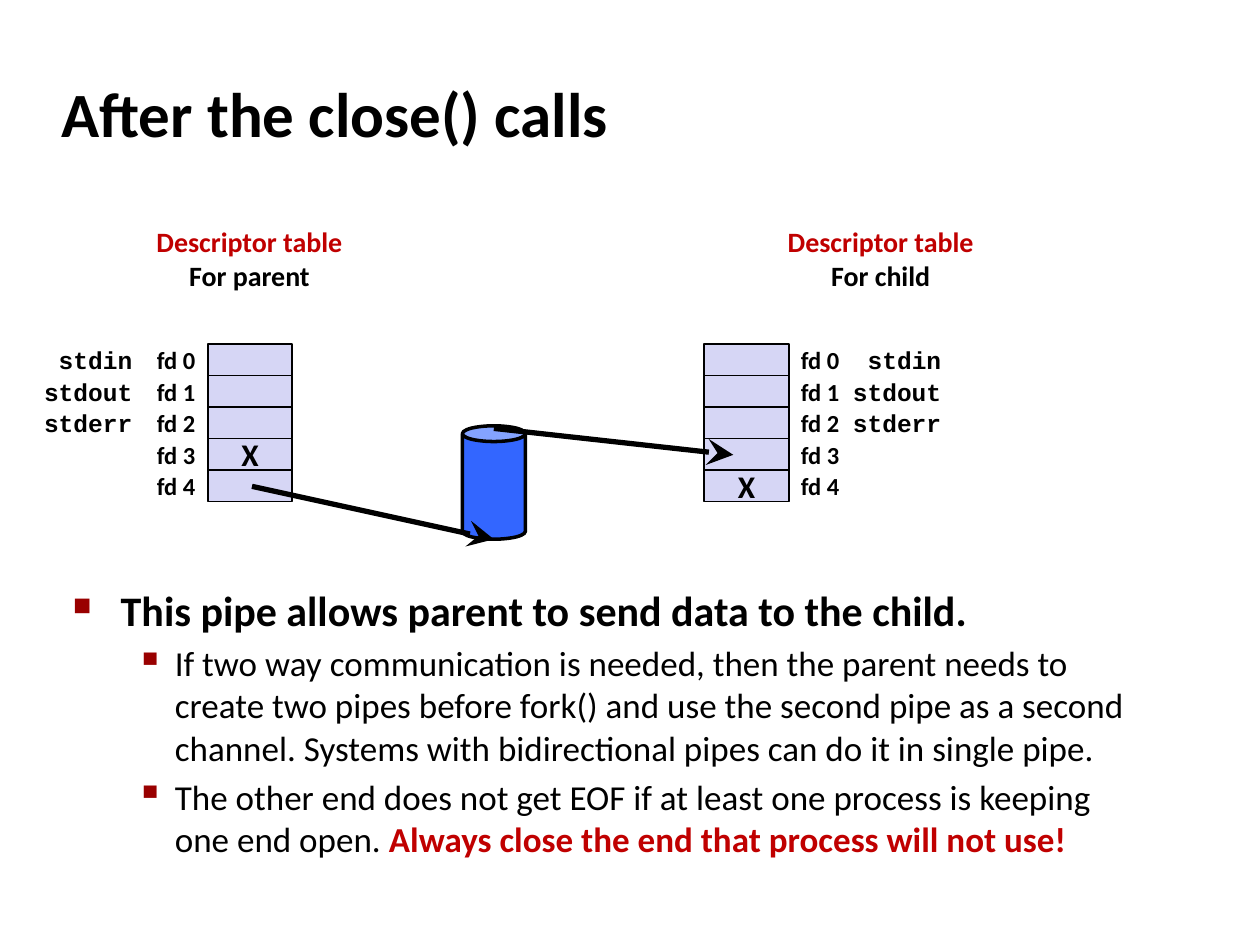
import pptx
import pptx.dml.color
import pptx.enum.shapes
import pptx.enum.text
import pptx.oxml.ns
import pptx.util
from lxml import etree

PX = 9144  # 100 px to the inch
BLACK, RED, BULLET = "000000", "C00000", "990000"
CELL, PIPE = "D6D6F5", "3366FF"
ALIGN = pptx.enum.text.PP_ALIGN
ANCHOR = pptx.enum.text.MSO_ANCHOR
SHAPE = pptx.enum.shapes.MSO_SHAPE

ROW_TOP, ROW_H, CELL_W = 273, 25, 67
STREAMS = ["stdin", "stdout", "stderr"]


def px(n):
    return pptx.util.Emu(n * PX)


def color(value):
    return pptx.dml.color.RGBColor.from_string(value)


def sub(parent, tag, **attrs):
    return etree.SubElement(parent, pptx.oxml.ns.qn(tag), attrs)


def write(p, text, size=14, font="Calibri", fill=BLACK, bold=True, align=None):
    r = p.add_run()
    r.text = text
    r.font.size = pptx.util.Pt(size)
    r.font.name = font
    r.font.bold = bold
    r.font.color.rgb = color(fill)
    if align is not None:
        p.alignment = align


def add_frame(s, x, y, w, h, wrap=False, anchor=ANCHOR.MIDDLE):
    """Add a text box and return its text frame."""
    tf = s.shapes.add_textbox(px(x), px(y), px(w), px(h)).text_frame
    tf.word_wrap = wrap
    tf.vertical_anchor = anchor
    return tf


def add_block(s, kind, x, y, w, h, fill, line_width):
    sp = s.shapes.add_shape(kind, px(x), px(y), px(w), px(h))
    sp.shadow.inherit = False
    sp.fill.solid()
    sp.fill.fore_color.rgb = color(fill)
    sp.line.color.rgb = color(BLACK)
    sp.line.width = pptx.util.Pt(line_width)
    return sp


def add_arrow(s, tip, tail):
    """Draw a line whose arrowhead is at tip."""
    line = s.shapes.add_connector(pptx.enum.shapes.MSO_CONNECTOR.STRAIGHT,
                                  *[px(n) for n in tip + tail])
    line.line.color.rgb = color(BLACK)
    line.line.width = pptx.util.Pt(3)
    sub(line.line._get_or_add_ln(), "a:headEnd", type="stealth", w="lg", len="lg")
    sub(line._element.spPr, "a:effectLst")


def add_descriptor_table(s, owner, cell_x, fd_x, stream_x, heading_x, closed):
    tf = add_frame(s, heading_x, 173, 170, 64)
    write(tf.paragraphs[0], "Descriptor table", size=16, fill=RED, align=ALIGN.CENTER)
    write(tf.add_paragraph(), f"For {owner}", size=16, align=ALIGN.CENTER)
    for fd in range(5):
        y = ROW_TOP + fd * ROW_H
        cell = add_block(s, SHAPE.RECTANGLE, cell_x, y, CELL_W, ROW_H, CELL, 1)
        if fd == closed:
            tf = cell.text_frame
            tf.word_wrap = False
            tf.vertical_anchor = ANCHOR.MIDDLE
            write(tf.paragraphs[0], "X", size=18, align=ALIGN.CENTER)
        tf = add_frame(s, fd_x, y, CELL_W, ROW_H)
        write(tf.paragraphs[0], f"fd {fd}", align=ALIGN.RIGHT)
    for fd, name in enumerate(STREAMS):
        tf = add_frame(s, stream_x, ROW_TOP - 4 + fd * ROW_H, 90, 33)
        write(tf.paragraphs[0], name, font="Courier New", align=ALIGN.RIGHT)


def set_bullet(p, char, percent, left, hanging, before):
    p.space_before = pptx.util.Pt(before)
    pPr = p._p.get_or_add_pPr()
    pPr.set("marL", str(px(left)))
    pPr.set("indent", str(px(-hanging)))
    sub(sub(pPr, "a:buClr"), "a:srgbClr", val=BULLET)
    sub(pPr, "a:buSzPct", val=str(percent * 1000))
    sub(pPr, "a:buChar", char=char)


def add_notes_on_pipe(s):
    tf = add_frame(s, 48, 459, 864, 209, wrap=True, anchor=ANCHOR.TOP)
    p = tf.paragraphs[0]
    set_bullet(p, "■", 60, 38, 38, 5)
    write(p, "This pipe allows parent to send data to the child.", size=24)
    details = [
        ("If two way communication is needed, then the parent needs to create two "
         "pipes before fork() and use the second pipe as a second channel. Systems "
         "with bidirectional pipes can do it in single pipe.", ""),
        ("The other end does not get EOF if at least one process is keeping one "
         "end open. ", "Always close the end that process will not use!"),
    ]
    for plain, warning in details:
        p = tf.add_paragraph()
        p.level = 1
        set_bullet(p, "▪", 110, 81, 31, 4)
        write(p, plain, size=20, bold=False)
        if warning:
            write(p, warning, size=20, fill=RED)


def main():
    prs = pptx.Presentation()
    prs.slide_width, prs.slide_height = px(1000), px(750)
    s = prs.slides.add_slide(prs.slide_layouts[6])

    title = add_frame(s, 39, 48, 830, 83, wrap=True)
    write(title.paragraphs[0], "After the close() calls", size=36)
    add_notes_on_pipe(s)

    add_descriptor_table(s, "parent", cell_x=165, fd_x=98, stream_x=25,
                         heading_x=113, closed=3)
    add_block(s, SHAPE.CAN, 367, 338, 50, 90, PIPE, 2)
    add_arrow(s, tip=(392, 428), tail=(200, 386))
    add_descriptor_table(s, "child", cell_x=559, fd_x=609, stream_x=667,
                         heading_x=614, closed=4)
    add_arrow(s, tip=(582, 361), tail=(392, 340))

    prs.save("out.pptx")


if __name__ == "__main__":
    main()
